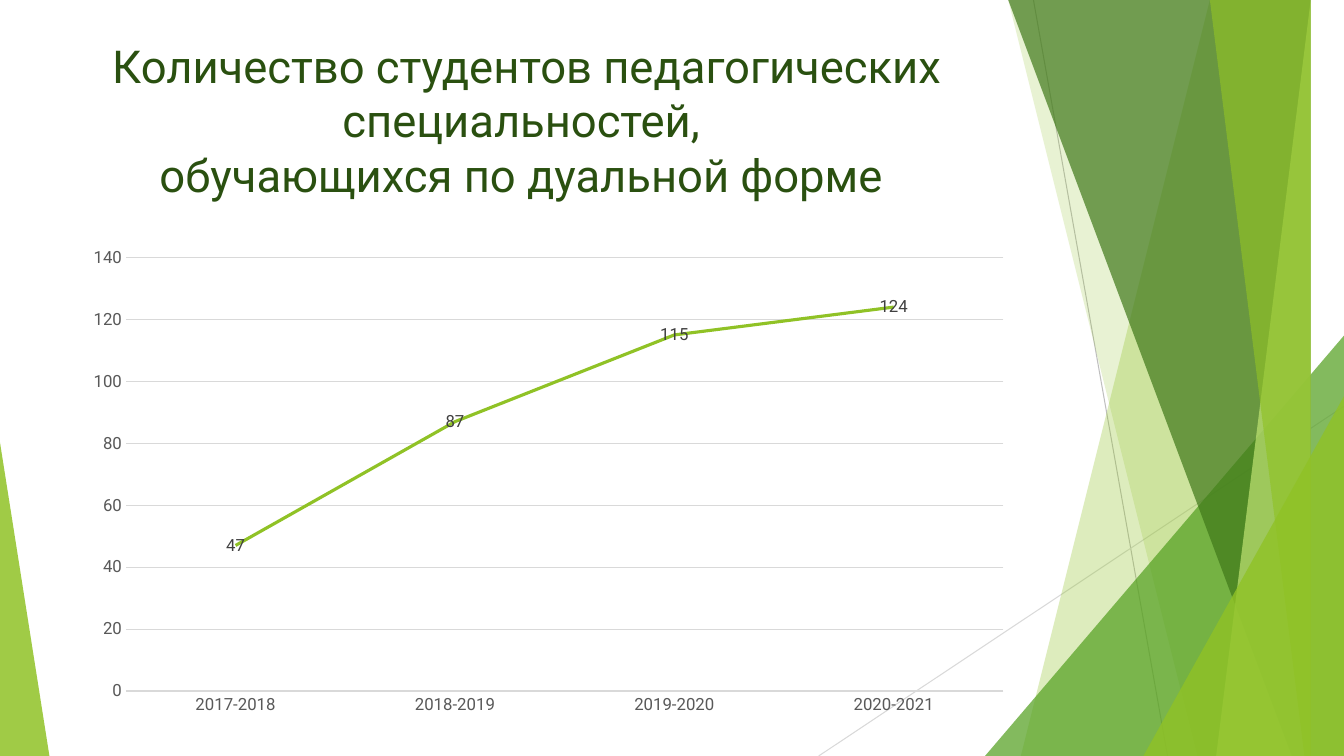
from dataclasses import dataclass

from lxml import etree
from pptx import Presentation
from pptx.chart.data import CategoryChartData
from pptx.dml.color import RGBColor
from pptx.enum import chart as ch, shapes, text
from pptx.oxml.ns import qn
from pptx.util import Inches, Pt


@dataclass(frozen=True)
class Theme:
    font: str = "Roboto"
    title_size: float = 32.4
    label_size: float = 12
    title: str = "2A5010"
    lime: str = "90C226"
    pale_lime: str = "C0E474"
    green: str = "54A021"
    dark_green: str = "3F7819"
    axis_text: str = "595959"
    label_text: str = "404040"
    grid: str = "D9D9D9"
    ray: str = "BFBFBF"
    thin: float = 0.75
    thick: float = 2.25


class SlideBuilder:
    def __init__(self, prs, theme):
        self.theme = theme
        self.slide = prs.slides.add_slide(prs.slide_layouts[5])
        self.shapes = self.slide.shapes

    def style_font(self, font, size, color):
        font.name = self.theme.font
        font.size = Pt(size)
        font.color.rgb = RGBColor.from_string(color)

    def style_line(self, line, color, width):
        line.color.rgb = RGBColor.from_string(color)
        line.width = Pt(width)

    def style_fill(self, sp, color, opacity):
        sp.shadow.inherit = False
        sp.line.fill.background()
        sp.fill.solid()
        sp.fill.fore_color.rgb = RGBColor.from_string(color)
        clr = sp.fill._xPr.find(qn("a:solidFill"))[0]
        etree.SubElement(clr, qn("a:alpha"), val=str(opacity * 1000))

    def line(self, x1, y1, x2, y2, color):
        sp = self.shapes.add_connector(
            shapes.MSO_CONNECTOR.STRAIGHT,
            Inches(x1), Inches(y1), Inches(x2), Inches(y2))
        self.style_line(sp.line, color, self.theme.thin)
        etree.SubElement(sp._element.spPr, qn("a:effectLst"))

    def polygon(self, points, color, opacity):
        fb = self.shapes.build_freeform(*points[0], scale=Inches(1))
        fb.add_line_segments(points[1:], close=True)
        self.style_fill(fb.convert_to_shape(), color, opacity)

    def triangle(self, x, y, w, h, apex, color, opacity):
        sp = self.shapes.add_shape(
            shapes.MSO_SHAPE.ISOSCELES_TRIANGLE,
            Inches(x), Inches(y), Inches(w), Inches(h))
        sp.adjustments[0] = apex
        self.style_fill(sp, color, opacity)

    def title(self, words, x, y, w, h):
        sp = self.shapes.title
        sp.left, sp.top, sp.width, sp.height = map(Inches, (x, y, w, h))
        tf = sp.text_frame
        tf.text = words
        tf.word_wrap = True
        tf.auto_size = text.MSO_AUTO_SIZE.NONE
        tf.vertical_anchor = text.MSO_ANCHOR.MIDDLE
        p = tf.paragraphs[0]
        p.alignment = text.PP_ALIGN.CENTER
        for r in p.runs:
            self.style_font(r.font, self.theme.title_size, self.theme.title)
        # Bring the title in front of the decoration
        self.shapes._spTree.append(sp._element)

    def line_chart(self, data, x, y, w, h, top, step):
        t = self.theme
        chart = self.shapes.add_chart(
            ch.XL_CHART_TYPE.LINE,
            Inches(x), Inches(y), Inches(w), Inches(h), data).chart
        chart.has_title = chart.has_legend = False
        chart.font.name = t.font

        # Axes
        cat, val = chart.category_axis, chart.value_axis
        for axis in (cat, val):
            axis.major_tick_mark = axis.minor_tick_mark = ch.XL_TICK_MARK.NONE
            self.style_font(axis.tick_labels.font, t.label_size, t.axis_text)
        self.style_line(cat.format.line, t.grid, t.thin)
        val.format.line.fill.background()
        self.style_line(val.major_gridlines.format.line, t.grid, t.thin)
        val.minimum_scale, val.maximum_scale, val.major_unit = 0, top, step

        # Series and its labels
        plot = chart.plots[0]
        plot.vary_by_categories = False
        for series in plot.series:
            series.smooth = False
            series.marker.style = ch.XL_MARKER_STYLE.NONE
            self.style_line(series.format.line, t.lime, t.thick)
            labels = series.data_labels
            labels.show_value = True
            labels.position = ch.XL_LABEL_POSITION.CENTER
            self.style_font(labels.font, t.label_size, t.label_text)


def main():
    prs = Presentation()
    right, bottom, top = 13.33, 7.5, -0.01
    prs.slide_width, prs.slide_height = Inches(right), Inches(bottom)
    theme = Theme()
    s = SlideBuilder(prs, theme)

    def right_band(x_top, x_bottom, color, opacity):
        s.polygon([(x_top, top), (right, top), (right, bottom),
                   (x_bottom, bottom)], color, opacity)

    def corner(x, y, color, opacity):
        s.triangle(x, y, right - x, bottom - y, 1, color, opacity)

    # Decoration, from back to front
    s.line(10.25, 0, 11.58, bottom, theme.ray)
    s.line(right, 4.03, 8.12, bottom, theme.grid)
    right_band(12.28, 10.04, theme.lime, 30)
    right_band(10.5, 11.83, theme.lime, 20)
    corner(9.77, 3.33, theme.green, 72)
    right_band(10.21, 12.91, theme.dark_green, 70)
    right_band(13.03, 11.92, theme.pale_lime, 70)
    right_band(11.96, 13.18, theme.lime, 65)
    corner(11.34, 3.93, theme.lime, 80)
    s.triangle(0, 4.39, 0.49, 3.11, 0, theme.lime, 85)

    # Title
    s.title("Количество студентов педагогических специальностей, \v"
            "обучающихся по дуальной форме ", 0.09, 0.29, 10.27, 1.79)

    # Students by academic year
    data = CategoryChartData()
    data.categories = ["2017-2018", "2018-2019", "2019-2020", "2020-2021"]
    data.add_series("Series 1", (47, 87, 115, 124))
    s.line_chart(data, 0.74, 2.36, 9.4, 4.83, top=140, step=20)

    prs.save("out.pptx")


if __name__ == "__main__":
    main()
